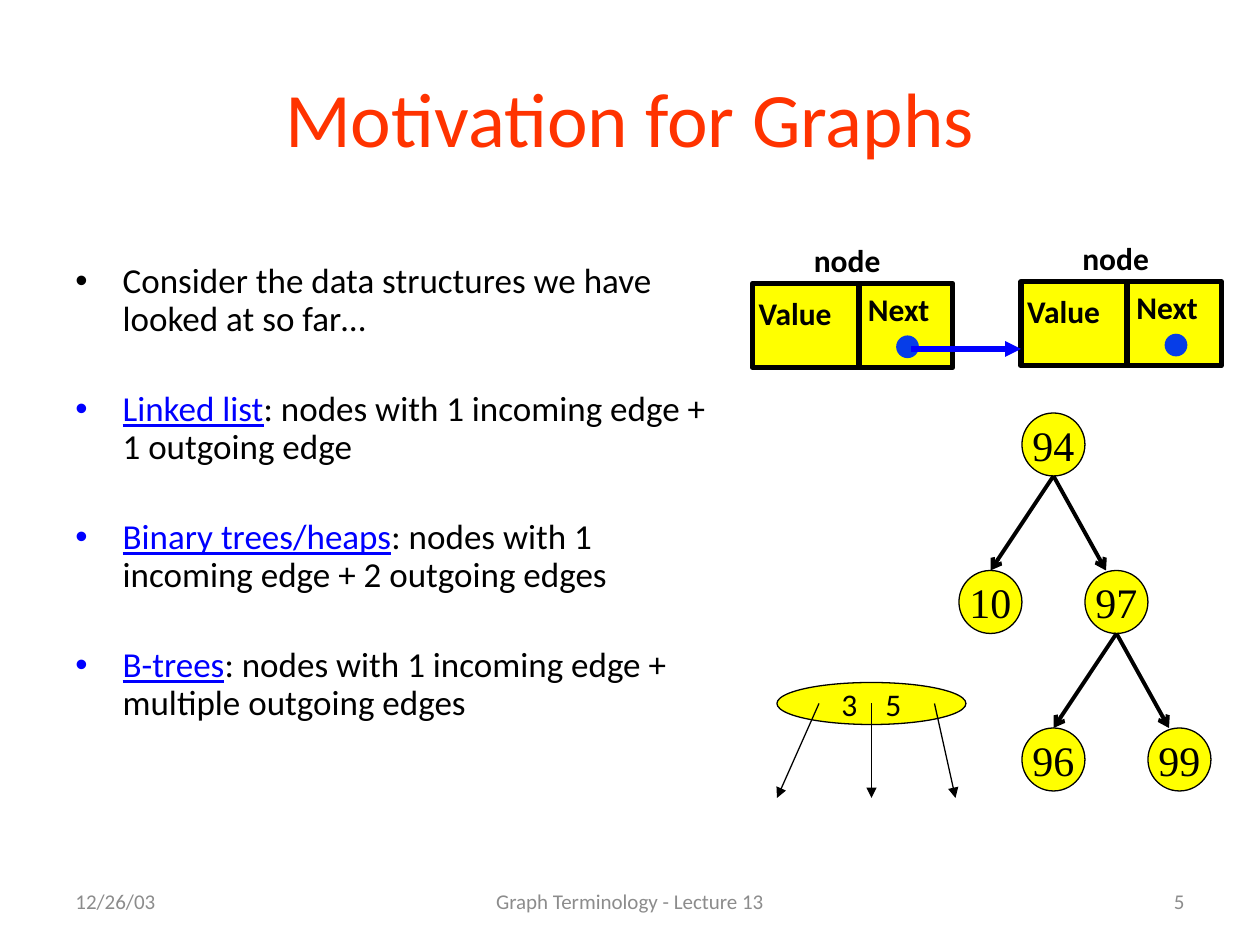
from lxml import etree
from pptx import Presentation
from pptx import util as u
from pptx.dml.color import RGBColor
from pptx.enum import shapes, text
from pptx.oxml.ns import qn

Pt = u.Pt
COLORS = {
    "title": "FF3300",
    "text": "000000",
    "term": "0000FF",
    "footer": "8C8C8C",
    "node": "FFFF00",
    "outline": "000000",
    "pointer": "063DE8",
    "link": "0000FF",
}
BULLETS = [
    ("", "Consider the data structures we have looked at so far…"),
    ("Linked list", ": nodes with 1 incoming edge + 1 outgoing edge"),
    ("Binary trees/heaps", ": nodes with 1 incoming edge + 2 outgoing edges"),
    ("B-trees", ": nodes with 1 incoming edge + multiple outgoing edges"),
]
# Each tree is (value, left subtree, right subtree).
HEAP = ("94", ("10", None, None), ("97", ("96", None, None), ("99", None, None)))
LEFT, CENTER, RIGHT = text.PP_ALIGN.LEFT, text.PP_ALIGN.CENTER, text.PP_ALIGN.RIGHT
TOP, MIDDLE = text.MSO_ANCHOR.TOP, text.MSO_ANCHOR.MIDDLE
RECTANGLE, OVAL = shapes.MSO_SHAPE.RECTANGLE, shapes.MSO_SHAPE.OVAL


def rgb(name):
    return RGBColor.from_string(COLORS[name])


def style_run(run, size, color="text", font="Calibri", bold=False):
    run.font.size = Pt(size)
    run.font.name = font
    run.font.bold = bold
    run.font.color.rgb = rgb(color)


def set_text(shape, words, size, align=LEFT, anchor=TOP, wrap=True, insets=None, **style):
    """Write one paragraph; insets is (left, top), with none on the other sides."""
    frame = shape.text_frame
    frame.text = words
    frame.word_wrap = wrap
    frame.vertical_anchor = anchor
    if insets is not None:
        frame.margin_left, frame.margin_top = Pt(insets[0]), Pt(insets[1])
        frame.margin_right = frame.margin_bottom = Pt(0)
    paragraph = frame.paragraphs[0]
    paragraph.alignment = align
    for run in paragraph.runs:
        style_run(run, size, **style)


def add_label(slide, box, words, size, **options):
    label = slide.shapes.add_textbox(*map(Pt, box))
    set_text(label, words, size, **options)


def add_box(slide, kind, box, fill="node", line="outline", weight=0.75):
    shape = slide.shapes.add_shape(kind, *map(Pt, box))
    shape.shadow.inherit = False
    shape.fill.solid()
    shape.fill.fore_color.rgb = rgb(fill)
    shape.line.color.rgb = rgb(line)
    shape.line.width = Pt(weight)
    return shape


def add_arrow(slide, start, end, weight=0.75, color="outline", head="triangle"):
    arrow = slide.shapes.add_connector(
        shapes.MSO_CONNECTOR.STRAIGHT, *map(Pt, (*start, *end)))
    arrow.line.color.rgb = rgb(color)
    arrow.line.width = Pt(weight)
    etree.SubElement(arrow.line._get_or_add_ln(), qn("a:tailEnd"), type=head)
    etree.SubElement(arrow._element.spPr, qn("a:effectLst"))


def add_bullets(slide, box):
    frame = slide.shapes.add_textbox(*map(Pt, box)).text_frame
    frame.word_wrap = True
    for index, (term, rest) in enumerate(BULLETS):
        paragraph = frame.paragraphs[0] if index == 0 else frame.add_paragraph()
        paragraph.line_spacing = 0.9
        paragraph.space_before = Pt(30 if index else 0)
        properties = paragraph._p.get_or_add_pPr()
        properties.set("marL", str(Pt(27)))
        properties.set("indent", str(Pt(-27)))
        etree.SubElement(properties, qn("a:buFont"), typeface="Arial")
        etree.SubElement(properties, qn("a:buChar"), char="•")
        if term:
            run = paragraph.add_run()
            run.text = term
            style_run(run, 20, "term")
            run.font.underline = True
        run = paragraph.add_run()
        run.text = rest
        style_run(run, 20)


def add_list_node(slide, left, top):
    add_label(slide, (left + 28, top, 62, 31), "node", 18, wrap=False, bold=True)
    cells = [("Value", 0, 60.5, (3.6, 6)), ("Next", 61, 53.5, (5, 3.8))]
    for words, offset, width, insets in cells:
        cell = add_box(slide, RECTANGLE, (left + offset, top + 28, width, 48), weight=3)
        set_text(cell, words, 18, wrap=False, insets=insets, bold=True)
    add_box(slide, OVAL, (left + 82.6, top + 58.2, 12, 12), "pointer", "pointer", 1)


def add_linked_list(slide, left, top):
    add_list_node(slide, left, top)
    add_list_node(slide, left + 153.4, top - 1)
    add_arrow(slide, (left + 90.6, top + 65.4), (left + 153.4, top + 65.4), 3, "link")


def add_binary_tree(slide, tree, left, top, size=36, drop=90):
    """Draw the root at left, top, and each child one diameter to its side."""
    value, *children = tree
    circle = add_box(slide, OVAL, (left, top, size, size))
    set_text(circle, value, 24, CENTER, MIDDLE, wrap=False, insets=(0, 0),
             font="Times New Roman")
    center = left + size / 2
    for child, shift, tip in zip(children, (-size, size), (-size, size - 6)):
        if child:
            add_arrow(slide, (center, top + size), (center + tip, top + drop),
                      2.25, head="arrow")
            add_binary_tree(slide, child, left + shift, top + drop, size, drop)


def add_b_tree_node(slide, left, top, width, height):
    node = add_box(slide, OVAL, (left, top, width, height))
    set_text(node, "3", 18, CENTER, MIDDLE, wrap=False)
    paragraph = node.text_frame.paragraphs[0]
    for words in (" ", "5"):
        run = paragraph.add_run()
        run.text = words
        style_run(run, 18)
    # Letter spacing on the single space parts the two keys.
    paragraph.runs[1].font._element.set("spc", "1200")
    middle = top + height / 2
    for start, end in ((24, 0), (54, 54), (90, 102)):
        add_arrow(slide, (left + start, middle), (left + end, middle + 54))


def add_footer(slide, top, height):
    parts = [
        (36, 168, "12/26/03", LEFT),
        (246, 228, "Graph Terminology - Lecture 13", CENTER),
        (516, 168, "5", RIGHT),
    ]
    for left, width, words, align in parts:
        add_label(slide, (left, top, width, height), words, 12, align=align,
                  anchor=MIDDLE, color="footer")


def main():
    presentation = Presentation()
    presentation.slide_width, presentation.slide_height = Pt(720), Pt(540)
    slide = presentation.slides.add_slide(presentation.slide_layouts[6])
    add_footer(slide, 500.5, 28.8)
    add_label(slide, (36, 21.6, 648, 90), "Motivation for Graphs", 44,
              align=CENTER, anchor=MIDDLE, color="title")
    add_bullets(slide, (36, 147, 379, 363))
    add_binary_tree(slide, HEAP, 584, 236)
    add_linked_list(slide, 430, 134)
    add_b_tree_node(slide, 444, 390, 108, 24)
    presentation.save("out.pptx")


if __name__ == "__main__":
    main()
